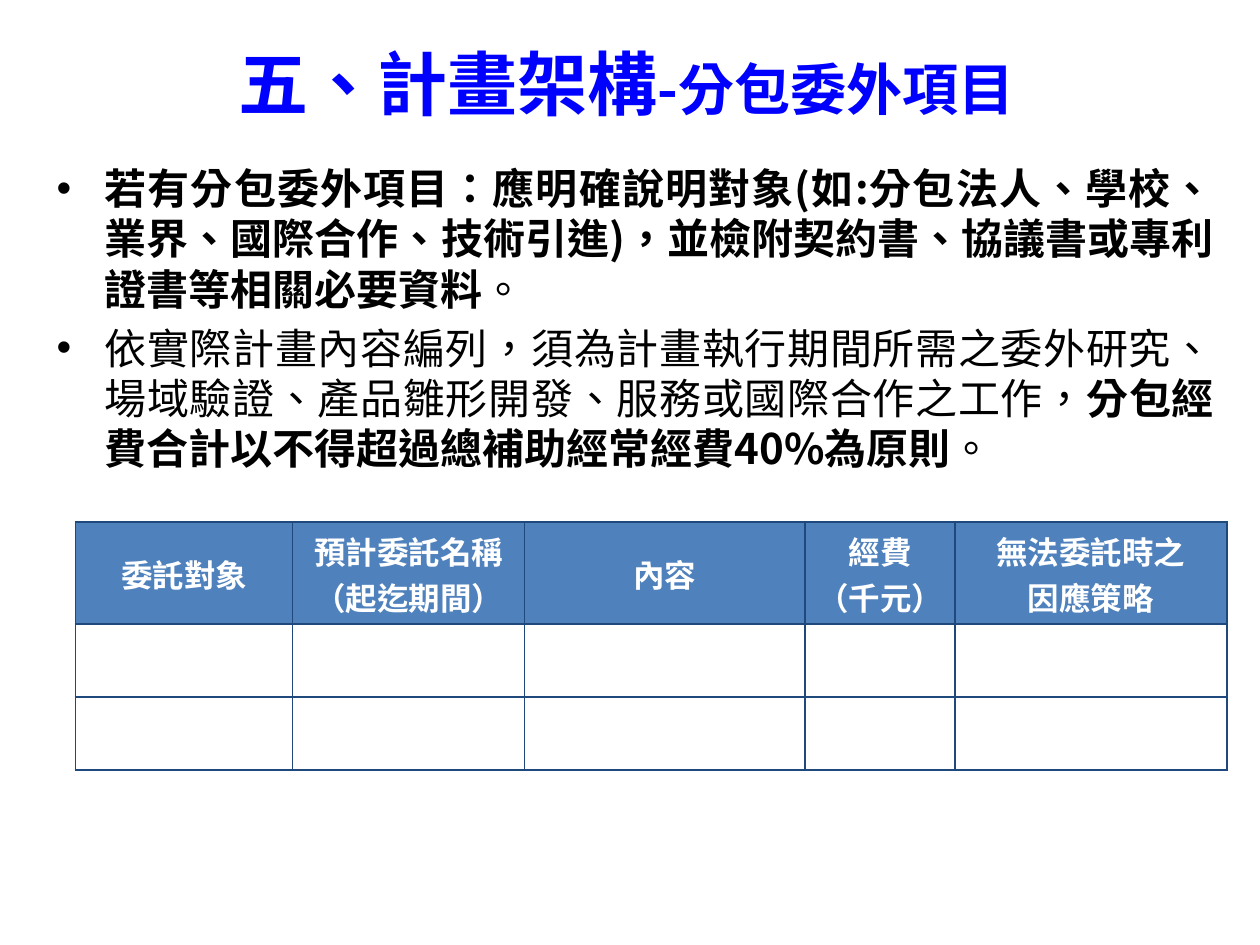
from dataclasses import dataclass

from pptx import Presentation
from pptx.dml.color import RGBColor
from pptx.enum.lang import MSO_LANGUAGE_ID as Lang
from pptx.enum.text import MSO_ANCHOR as Anchor, PP_ALIGN as Align
from pptx.oxml import parse_xml
from pptx.oxml.ns import nsdecls
from pptx.util import Cm, Length, Pt

BLUE = RGBColor(0x00, 0x00, 0xFF)
BLACK = RGBColor(0x00, 0x00, 0x00)
WHITE = RGBColor(0xFF, 0xFF, 0xFF)
HEAD = RGBColor(0x4F, 0x81, 0xBD)
EDGE = RGBColor(0x1F, 0x49, 0x7D)
NOTO = "Noto Sans CJK SC"


@dataclass
class Part:
    text: str
    bold: bool = True
    size: float = 24


@dataclass
class Column:
    width: float
    lines: list[str]


TITLE = [Part("五、計畫架構", size=40), Part("-分包委外項目", size=32)]
POINTS = [
    [Part("若有分包委外項目：應明確說明對象(如:分包法人、學校、業界、國際合作、技術引進)，"
          "並檢附契約書、協議書或專利證書等相關必要資料"),
     Part("。", bold=False)],
    [Part("依實際計畫內容編列，須為計畫執行期間所需之委外研究、場域驗證、產品雛形開發、"
          "服務或國際合作之工作，", bold=False),
     Part("分包經費合計以不得超過總補助經常經費40%為原則"),
     Part("。", bold=False)],
]
COLUMNS = [
    Column(4.38, ["委託對象"]),
    Column(4.67, ["預計委託名稱", "（起迄期間）"]),
    Column(5.66, ["內容"]),
    Column(3.02, ["經費", "（千元）"]),
    Column(5.48, ["無法委託時之", "因應策略"]),
]
ROWS = [2.06, 1.47, 1.47]


def write(para, part: Part, *, color: RGBColor, font: str = NOTO) -> None:
    """Add one formatted run to a paragraph."""
    run = para.add_run()
    run.text = part.text
    face = run.font
    face.size, face.bold, face.name = Pt(part.size), part.bold, font
    face.color.rgb = color
    face.language_id = Lang.TRADITIONAL_CHINESE
    latin = run._r.rPr.find(".//{*}latin")
    latin.addnext(parse_xml(f'<a:ea {nsdecls("a")} typeface="{font}"/>'))


def fill_text(frame, paras: list[list[Part]], *, align: Align, color: RGBColor,
              font: str = NOTO, bullet: bool = False, gap: float = 0,
              pitch: Length | None = None) -> None:
    """Write paragraphs of parts into a text frame."""
    for i, parts in enumerate(paras):
        para = frame.add_paragraph() if i else frame.paragraphs[0]
        para.alignment = align
        if bullet:
            props = para._p.get_or_add_pPr()
            props.set("marL", str(Cm(0.97)))
            props.set("indent", str(-Cm(0.97)))
            props.set("hangingPunct", "0")
            props.append(parse_xml(f'<a:buFont {nsdecls("a")} typeface="Arial"/>'))
            props.append(parse_xml(f'<a:buChar {nsdecls("a")} char="•"/>'))
        if pitch:
            para.line_spacing = pitch
        if i and gap:
            para.space_before = Pt(gap)
        for part in parts:
            write(para, part, color=color, font=font)


def add_box(slide, x: float, y: float, w: float, h: float, anchor: Anchor):
    """Add a wrapping text box and return its frame."""
    frame = slide.shapes.add_textbox(Cm(x), Cm(y), Cm(w), Cm(h)).text_frame
    frame.word_wrap = True
    frame.vertical_anchor = anchor
    return frame


def edge_cell(cell) -> None:
    """Draw a thin line on all four sides of a cell."""
    props = cell._tc.get_or_add_tcPr()
    for i, side in enumerate(("lnL", "lnR", "lnT", "lnB")):
        props.insert(i, parse_xml(
            f'<a:{side} {nsdecls("a")} w="{Pt(1)}"><a:solidFill>'
            f'<a:srgbClr val="{EDGE}"/></a:solidFill></a:{side}>'))


def add_grid(slide, x: float, y: float) -> None:
    """Add the table with its header and empty rows."""
    wide = sum(col.width for col in COLUMNS)
    grid = slide.shapes.add_table(len(ROWS), len(COLUMNS), Cm(x), Cm(y),
                                  Cm(wide), Cm(sum(ROWS))).table
    for row, high in zip(grid.rows, ROWS):
        row.height = Cm(high)
    for i, col in enumerate(COLUMNS):
        grid.columns[i].width = Cm(col.width)
        for j in range(len(ROWS)):
            cell = grid.cell(j, i)
            cell.vertical_anchor = Anchor.MIDDLE
            cell.margin_left = cell.margin_right = cell.margin_bottom = Cm(0.08)
            cell.margin_top = 0
            if j:
                cell.fill.background()
            else:
                cell.fill.solid()
                cell.fill.fore_color.rgb = HEAD
                fill_text(cell.text_frame, [[Part(line, size=18)] for line in col.lines],
                          align=Align.CENTER, color=WHITE, font="Arial", pitch=Pt(26.3))
            edge_cell(cell)


def main() -> None:
    deck = Presentation()
    deck.slide_width, deck.slide_height = Cm(25.4), Cm(19.05)
    slide = deck.slides.add_slide(deck.slide_layouts[6])

    # Bullet points
    body = add_box(slide, 0.89, 3.15, 23.83, 13.77, Anchor.TOP)
    fill_text(body, POINTS, align=Align.JUSTIFY, color=BLACK, bullet=True, gap=4.8)

    # Title
    head = add_box(slide, 1.2, 0.08, 22.86, 3.18, Anchor.MIDDLE)
    fill_text(head, [TITLE], align=Align.CENTER, color=BLUE)

    # Table of subcontracted items
    add_grid(slide, 1.52, 10.52)
    deck.save("out.pptx")


if __name__ == "__main__":
    main()
